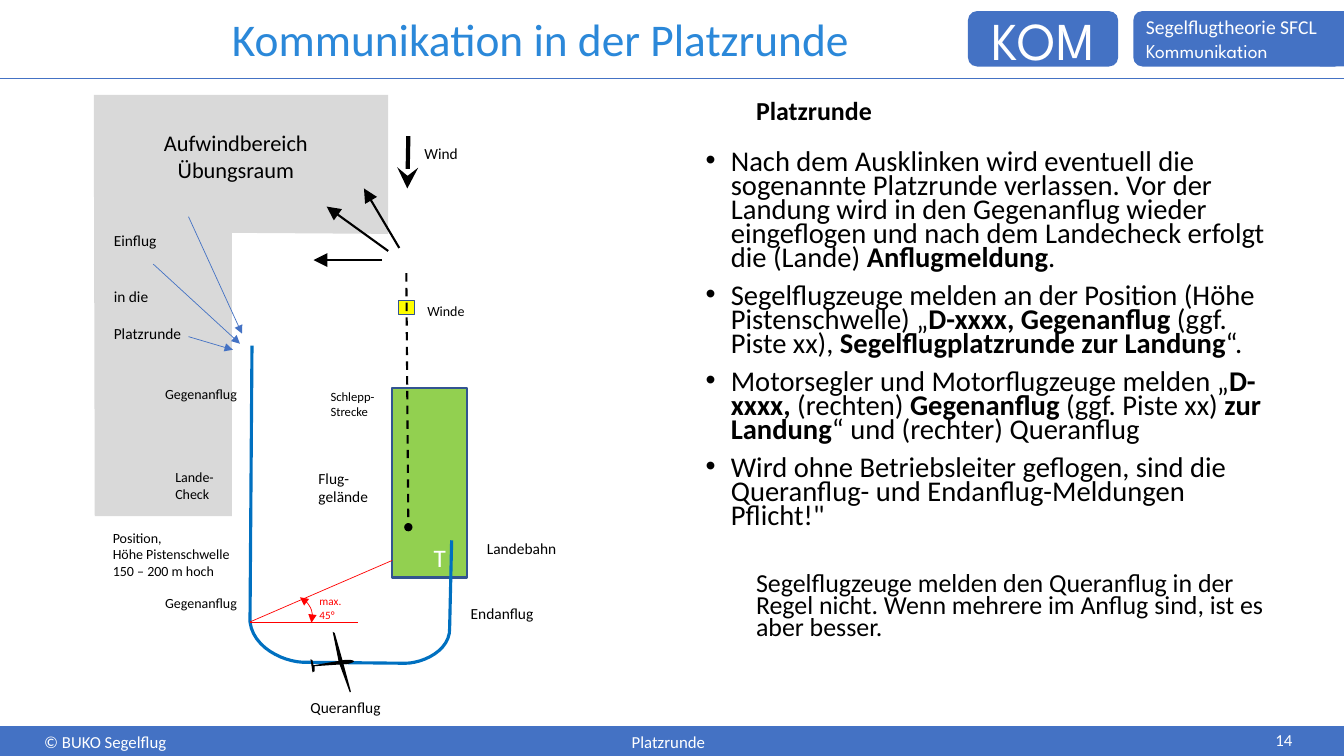
from dataclasses import dataclass

from lxml import etree
from pptx import Presentation
from pptx.dml.color import RGBColor
from pptx.enum.dml import MSO_LINE
from pptx.enum.shapes import MSO_CONNECTOR, MSO_SHAPE
from pptx.enum.text import MSO_ANCHOR, PP_ALIGN
from pptx.oxml.ns import qn
from pptx.util import Inches, Pt


@dataclass(frozen=True)
class Theme:
    font: str = "Calibri"
    badge_font: str = "League Spartan"
    blue: str = "4472C4"
    title_blue: str = "2B88D9"
    edge: str = "325491"
    circuit: str = "0070C0"
    grass: str = "92D050"
    yellow: str = "FFFF00"
    grey: str = "D9D9D9"
    red: str = "FF0000"
    black: str = "000000"
    white: str = "FFFFFF"
    title: float = 32.4
    badge: float = 38
    course: float = 14
    body: float = 20.4
    note: float = 18.5
    runway: float = 18
    area: float = 16
    footer: float = 12
    label: float = 11
    small: float = 10
    tiny: float = 9
    angle: float = 8


T = Theme()
rgb = RGBColor.from_string
CENTER, MIDDLE, TOP = PP_ALIGN.CENTER, MSO_ANCHOR.MIDDLE, MSO_ANCHOR.TOP

prs = Presentation()
prs.slide_width, prs.slide_height = Inches(13.33), Inches(7.5)
s = prs.slides.add_slide(prs.slide_layouts[6])


def add_box(at, text="", size=T.label, color=T.black, fill=None, line=None, weight=1,
            kind=MSO_SHAPE.RECTANGLE, align=PP_ALIGN.LEFT, anchor=TOP):
    """Add a filled shape, or a plain text box when there is no fill."""
    place = [Inches(v) for v in at]
    if fill:
        sp = s.shapes.add_shape(kind, *place)
        sp.shadow.inherit = False
        sp.fill.solid()
        sp.fill.fore_color.rgb = rgb(fill)
        if line:
            sp.line.color.rgb = rgb(line)
            sp.line.width = Pt(weight)
        else:
            sp.line.fill.background()
    else:
        sp = s.shapes.add_textbox(*place)
    tf = sp.text_frame
    tf.word_wrap = True
    tf.vertical_anchor = anchor
    tf.text = text
    for p in tf.paragraphs:
        p.alignment = align
        for r in p.runs:
            r.font.name, r.font.size = T.font, Pt(size)
            r.font.color.rgb = rgb(color)
    return sp


def add_outline(start, steps, closed=True):
    """Draw a freeform; a step of six numbers is a cubic curve, one of two a straight line."""
    points, (x, y) = [], start
    for step in steps:
        if len(step) == 2:
            points.append(step)
        else:
            x1, y1, x2, y2, x3, y3 = step
            for i in range(1, 13):
                t = i / 12
                a, b, c, d = (1 - t) ** 3, 3 * t * (1 - t) ** 2, 3 * t * t * (1 - t), t ** 3
                points.append((a * x + b * x1 + c * x2 + d * x3,
                               a * y + b * y1 + c * y2 + d * y3))
        x, y = step[-2:]
    builder = s.shapes.build_freeform(Inches(start[0]), Inches(start[1]))
    builder.add_line_segments([(Inches(px), Inches(py)) for px, py in points], close=closed)
    sp = builder.convert_to_shape()
    sp.shadow.inherit = False
    return sp


# Header and footer
add_box((0, 7.21, 13.33, 0.31), fill=T.blue)
add_box((0.34, 7.21, 1.5, 0.31), "© BUKO Segelflug", T.footer, T.white)
add_box((4.95, 7.21, 3.36, 0.31), "Platzrunde", T.footer, T.white, align=CENTER)
add_box((12.55, 7.19, 0.59, 0.31), "14", T.footer, T.white)
badge = add_box((9.6, 0.11, 1.49, 0.55), "KOM", T.badge, T.white, T.blue,
                kind=MSO_SHAPE.ROUNDED_RECTANGLE, align=CENTER, anchor=MIDDLE)
badge.text_frame.paragraphs[0].runs[0].font.name = T.badge_font
add_box((13.09, 0.11, 0.25, 0.55), fill=T.blue)
course = add_box((11.24, 0.11, 2.09, 0.55), "Segelflugtheorie SFCL\nKommunikation", T.course,
                 T.white, T.blue, kind=MSO_SHAPE.ROUNDED_RECTANGLE, anchor=MIDDLE)
course.text_frame.paragraphs[1].runs[0].font.name = T.badge_font
title = add_box((1.04, 0.14, 8.64, 0.55), "Kommunikation in der Platzrunde", T.title,
                T.title_blue, align=CENTER, anchor=MIDDLE)
title.text_frame.paragraphs[0].line_spacing = 0.9

# Body text: asterisks enclose bold words
# (text, size, bulleted, space before, space after)
body = [
    ("*Platzrunde*", T.note, False, 0, 10),
    ("Nach dem Ausklinken wird eventuell die sogenannte Platzrunde verlassen. Vor der Landung "
     "wird in den Gegenanflug wieder eingeflogen und nach dem Landecheck erfolgt die (Lande) "
     "*Anflugmeldung*.", T.body, True, 10, 0),
    ("Segelflugzeuge melden an der Position (Höhe Pistenschwelle) „*D-xxxx, Gegenanflug *"
     "(ggf. Piste xx), *Segelflugplatzrunde zur Landung*“.", T.body, True, 10, 0),
    ("Motorsegler und Motorflugzeuge melden „*D-xxxx,* (rechten) *Gegenanflug* (ggf. Piste xx) "
     "*zur Landung*“ und (rechter) Queranflug", T.body, True, 10, 0),
    ("Wird ohne Betriebsleiter geflogen, sind die Queranflug- und Endanflug-Meldungen "
     "Pflicht!\"", T.body, True, 10, 0),
    ("Segelflugzeuge melden den Queranflug in der Regel nicht. Wenn mehrere im Anflug sind, "
     "ist es aber besser.", T.note, False, 32, 0),
]
tf = add_box((6.9, 0.97, 5.79, 5.99)).text_frame
for i, (text, size, bulleted, before, after) in enumerate(body):
    p = tf.add_paragraph() if i else tf.paragraphs[0]
    pPr = p._p.get_or_add_pPr()
    pPr.set("marL", str(Inches(0.25 if bulleted else 0.5)))
    pPr.set("indent", str(Inches(-0.25 if bulleted else 0)))
    if bulleted:
        etree.SubElement(pPr, qn("a:buFont")).set("typeface", "Arial")
        etree.SubElement(pPr, qn("a:buChar")).set("char", "•")
    p.line_spacing, p.space_before, p.space_after = 0.7, Pt(before), Pt(after)
    for j, part in enumerate(text.split("*")):
        if part:
            r = p.add_run()
            r.text = part
            r.font.name, r.font.size, r.font.bold = T.font, Pt(size), j % 2 == 1
            r.font.color.rgb = rgb(T.black)

# Thermal area, winch and labels
area = add_outline((0.93, 0.94), [(3.85, 0.94), (3.85, 2.32), (2.3, 2.31), (2.3, 5.12),
                                  (0.94, 5.12)])
area.fill.solid()
area.fill.fore_color.rgb = rgb(T.grey)
area.line.fill.background()
add_box((1.39, 1.23, 1.9, 0.97), "Aufwindbereich\nÜbungsraum", T.area, align=CENTER)
add_box((3.95, 2.98, 0.16, 0.14), fill=T.yellow, line=T.edge)

for at, text, size, color, fill in [
    ((1.54, 5.85, 0.95, 0.23), "Gegenanflug", T.small, T.black, T.white),
    ((1.54, 3.78, 0.95, 0.23), "Gegenanflug", T.small, T.black, None),
    ((1.64, 4.6, 0.65, 0.45), "Lande-Check", T.small, T.black, None),
    ((1.02, 5.2, 1.39, 0.58), "Position,\nHöhe Pistenschwelle\n150 – 200 m hoch", T.small,
     T.black, T.white),
    ((4.11, 1.38, 0.65, 0.27), "Wind", T.label, T.black, T.white),
    ((3.18, 3.81, 0.8, 0.41), "Schlepp-Strecke", T.tiny, T.black, T.white),
    ((4.14, 2.95, 0.63, 0.24), "Winde", T.small, T.black, T.white),
    ((4.57, 5.94, 0.86, 0.25), "Endanflug", T.label, T.black, T.white),
    ((2.98, 6.88, 0.95, 0.25), "Queranflug", T.label, T.black, T.white),
    ((3.07, 5.85, 0.54, 0.35), "max. 45°", T.angle, T.red, T.white),
    ((4.73, 5.3, 0.97, 0.25), "Landebahn", T.label, T.black, T.white),
    ((3.06, 4.6, 0.77, 0.41), "Flug-gelände", T.label, T.black, T.white),
]:
    add_box(at, text, size, color, fill)

entry = add_box((1.03, 2.24, 0.89, 0.97), "Einflug\nin die\nPlatzrunde")
for p, gap in zip(entry.text_frame.paragraphs[1:], (26.8, 13.4)):
    p.space_before = Pt(gap)

# Runway and circuit
runway = add_box((3.89, 3.85, 0.74, 1.88), "T", T.runway, T.white, T.grass, T.edge, 1.5,
                 align=CENTER, anchor=MSO_ANCHOR.BOTTOM)
runway.text_frame.margin_left = Inches(0.3)
circuit = add_outline((2.5, 3.43), [(2.48, 6.17), (2.51, 6.42, 2.8, 6.56, 3, 6.57), (4.02, 6.58),
                                    (4.2, 6.58, 4.47, 6.45, 4.46, 6.23), (4.48, 5.36)], False)
circuit.fill.background()
circuit.line.color.rgb = rgb(T.circuit)
circuit.line.width = Pt(2.25)

# Lines and arrows: (x1, y1, x2, y2, colour, weight, end, end size)
lines = [
    (4.05, 1.35, 4.04, 1.87, T.black, 3, "stealth", "lg"),
    (3.85, 2.49, 3.24, 2.05, T.black, 1.5, "triangle", "lg"),
    (3.96, 2.46, 3.61, 1.87, T.black, 1.5, "triangle", "lg"),
    (3.79, 2.58, 3.11, 2.58, T.black, 1.5, "triangle", "lg"),
    (1.87, 2.15, 2.4, 3.31, T.blue, 0.5, "triangle", "med"),
    (1.52, 2.62, 2.38, 3.41, T.blue, 0.5, "triangle", "med"),
    (1.87, 3.34, 2.31, 3.47, T.blue, 0.5, "triangle", "med"),
    (2.48, 6.17, 3.55, 6.17, T.red, 0.5, None, None),
    (2.48, 6.17, 3.89, 5.56, T.red, 0.5, None, None),
    (4.03, 2.71, 4.05, 5.23, T.black, 1.5, "oval", "med"),
    (0, 0.78, 13.33, 0.78, T.blue, 1.25, None, None),
    (0, 7.21, 13.33, 7.21, T.blue, 1.25, None, None),
]
for *ends, color, weight, end, end_size in lines:
    cx = s.shapes.add_connector(MSO_CONNECTOR.STRAIGHT, *[Inches(v) for v in ends])
    cx.line.color.rgb = rgb(color)
    cx.line.width = Pt(weight)
    if end == "oval":
        cx.line.dash_style = MSO_LINE.DASH
    spPr = cx._element.spPr
    if end:
        etree.SubElement(spPr.find(qn("a:ln")), qn("a:tailEnd"),
                         {"type": end, "w": end_size, "len": end_size})
    etree.SubElement(spPr, qn("a:effectLst"))

arc = s.shapes.add_shape(MSO_SHAPE.ARC, *[Inches(v) for v in (2.56, 5.89, 0.54, 0.45)])
arc.shadow.inherit = False
arc.adjustments[0], arc.adjustments[1] = 184.47, 8.28
arc.fill.background()
arc.line.color.rgb = rgb(T.red)
arc.line.width = Pt(0.5)
for tag in ("a:headEnd", "a:tailEnd"):
    etree.SubElement(arc._element.spPr.find(qn("a:ln")), qn(tag)).set("type", "triangle")

# Glider
fuselage = add_outline((3.4, 6.55), [
    (3.46, 6.54, 3.51, 6.55, 3.51, 6.56), (3.52, 6.56, 3.48, 6.59, 3.41, 6.59), (3.12, 6.61),
    (3.12, 6.66), (3.1, 6.67), (3.08, 6.54), (3.1, 6.55), (3.11, 6.6)])
wings = add_outline((3.4, 6.56), [(3.48, 6.86), (3.47, 6.87), (3.36, 6.57), (3.3, 6.27),
                                  (3.32, 6.28)])
for part in (fuselage, wings):
    part.fill.solid()
    part.fill.fore_color.rgb = rgb(T.black)
    part.line.fill.background()

prs.save("out.pptx")
